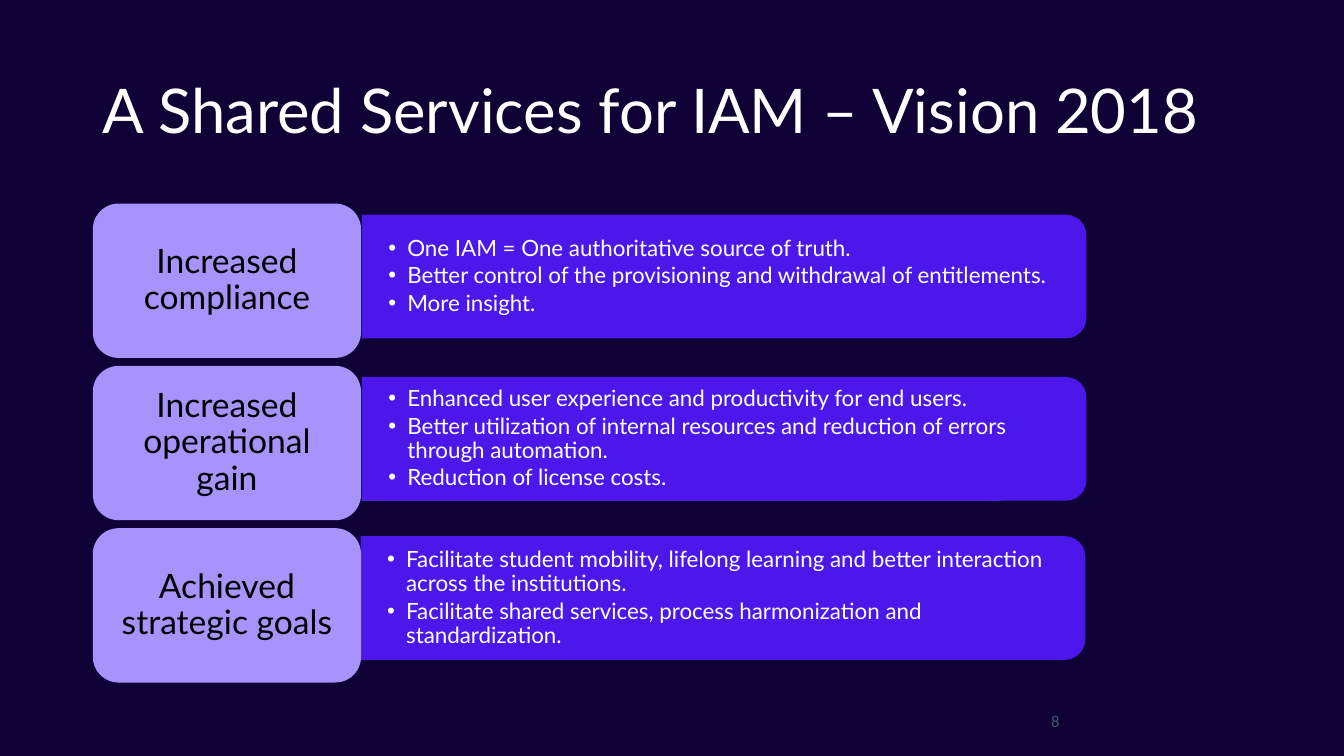
from dataclasses import dataclass

from lxml import etree
from pptx import Presentation
from pptx.dml.color import RGBColor
from pptx.enum import shapes, text
from pptx.oxml import ns
from pptx.util import Cm, Pt

NIGHT = RGBColor(0x0F, 0x00, 0x35)
VIOLET = RGBColor(0x53, 0x1A, 0xFF)
LILAC = RGBColor(0xA7, 0x93, 0xFC)
WHITE = RGBColor(0xFF, 0xFF, 0xFF)
BLACK = RGBColor(0x00, 0x00, 0x00)
SLATE = RGBColor(0x44, 0x54, 0x6A)

LABEL_LEFT, LABEL_TOP, LABEL_WIDTH, LABEL_HEIGHT = 2.34, 5.13, 6.76, 3.89
ROW_PITCH = 4.09
PANEL_LENGTH, PANEL_DEPTH = 18.26, 3.12
LIST_WIDTH, LIST_HEIGHT, LIST_SHIFT = 18.11, 2.82, -0.1
BULLET_INDENT = 0.48


@dataclass(frozen=True)
class Benefit:
    label: str
    points: list[str]
    center_x: float  # middle of the panel, in cm
    center_y: float


BENEFITS = [
    Benefit("Increased compliance", [
        "One IAM = One authoritative source of truth.",
        "Better control of the provisioning and withdrawal of entitlements.",
        "More insight.",
    ], 18.25, 6.97),
    Benefit("Increased operational gain", [
        "Enhanced user experience and productivity for end users.",
        "Better utilization of internal resources and reduction of errors through automation.",
        "Reduction of license costs.",
    ], 18.25, 11.06),
    Benefit("Achieved strategic goals", [
        "Facilitate student mobility, lifelong learning and better interaction across the institutions.",
        "Facilitate shared services, process harmonization and standardization.",
    ], 18.22, 15.07),
]


def place(box, left: float, top: float, width: float, height: float) -> None:
    box.left, box.top, box.width, box.height = Cm(left), Cm(top), Cm(width), Cm(height)


def write(box, lines: list[str], *, size: float, color: RGBColor, font: str = "Lato",
          align=text.PP_ALIGN.LEFT, spacing: float = 0.9, after: float = 0,
          bullet: bool = False, insets: tuple[float, float] = (0.25, 0.13)) -> None:
    """Fill a box with one formatted paragraph per line; insets are side and top in cm."""
    frame = box.text_frame
    frame.word_wrap = True
    frame.auto_size = text.MSO_AUTO_SIZE.NONE
    frame.vertical_anchor = text.MSO_ANCHOR.MIDDLE
    frame.margin_left = frame.margin_right = Cm(insets[0])
    frame.margin_top = frame.margin_bottom = Cm(insets[1])
    for number, line in enumerate(lines):
        para = frame.add_paragraph() if number else frame.paragraphs[0]
        para.alignment = align
        para.line_spacing = spacing
        para.space_before = Pt(0)
        para.space_after = Pt(after)
        if bullet:
            properties = para._p.get_or_add_pPr()
            properties.set("marL", str(Cm(BULLET_INDENT)))
            properties.set("indent", str(-Cm(BULLET_INDENT)))
            etree.SubElement(properties, ns.qn("a:buFont"), typeface="Arial")
            etree.SubElement(properties, ns.qn("a:buChar"), char="•")
        span = para.add_run()
        span.text = line
        span.font.name = font
        span.font.size = Pt(size)
        span.font.bold = False
        span.font.color.rgb = color


def add_block(page, preset, color: RGBColor, left: float, top: float,
              width: float, height: float):
    block = page.shapes.add_shape(preset, Cm(left), Cm(top), Cm(width), Cm(height))
    block.shadow.inherit = False
    block.fill.solid()
    block.fill.fore_color.rgb = color
    block.line.fill.background()
    return block


def add_benefit(page, benefit: Benefit, row: int, list_box) -> None:
    panel = add_block(page, shapes.MSO_SHAPE.ROUND_2_SAME_RECTANGLE, VIOLET,
                      benefit.center_x - PANEL_DEPTH / 2,
                      benefit.center_y - PANEL_LENGTH / 2, PANEL_DEPTH, PANEL_LENGTH)
    panel.rotation = 90
    tint = panel.element.spPr.find(ns.qn("a:solidFill"))[0]
    etree.SubElement(tint, ns.qn("a:alpha"), val="90000")

    page.shapes.element.append(list_box.element)  # bring the list in front of its panel
    place(list_box, benefit.center_x + LIST_SHIFT - LIST_WIDTH / 2,
          benefit.center_y - LIST_HEIGHT / 2, LIST_WIDTH, LIST_HEIGHT)
    write(list_box, benefit.points, size=16, color=WHITE, after=2.5, bullet=True,
          insets=(0.69, 0.36))

    label = add_block(page, shapes.MSO_SHAPE.ROUNDED_RECTANGLE, LILAC, LABEL_LEFT,
                      LABEL_TOP + row * ROW_PITCH, LABEL_WIDTH, LABEL_HEIGHT)
    write(label, [benefit.label], size=24, color=BLACK, align=text.PP_ALIGN.CENTER)


def main() -> None:
    deck = Presentation()
    deck.slide_width, deck.slide_height = Cm(33.87), Cm(19.05)
    page = deck.slides.add_slide(deck.slide_layouts.get_by_name("Comparison"))
    page.background.fill.solid()
    page.background.fill.fore_color.rgb = NIGHT

    title = page.shapes.title
    place(title, 2.34, 1.02, 29.74, 3.68)
    write(title, ["A Shared Services for IAM – Vision 2018"], size=44, color=WHITE)

    list_boxes = [box for box in page.placeholders if box.placeholder_format.idx > 0]
    for row, (benefit, list_box) in enumerate(zip(BENEFITS, list_boxes)):
        add_benefit(page, benefit, row, list_box)
    for spare in list_boxes[len(BENEFITS):]:
        page.shapes.element.remove(spare.element)

    page_number = page.shapes.add_textbox(Cm(26.24), Cm(17.65), Cm(7.62), Cm(1.02))
    write(page_number, ["8"], size=12, color=SLATE, font="Calibri", spacing=1.0)

    deck.save("out.pptx")


if __name__ == "__main__":
    main()
